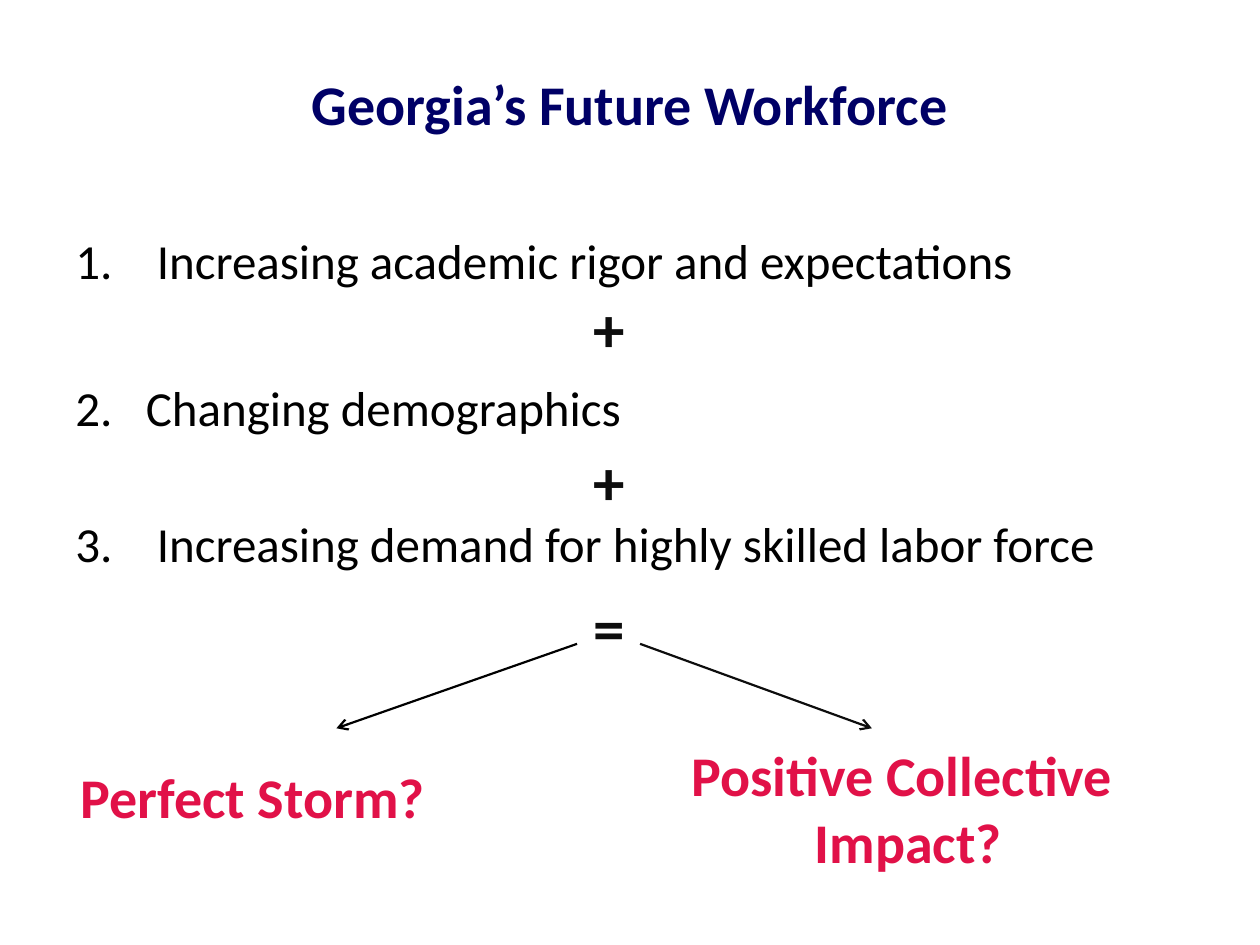
from dataclasses import dataclass

from lxml import etree
from pptx import Presentation
from pptx.dml.color import RGBColor
from pptx.enum.shapes import MSO_CONNECTOR
from pptx.enum.text import MSO_ANCHOR, PP_ALIGN
from pptx.oxml.ns import qn
from pptx.util import Inches, Pt

LEFT, CENTER = PP_ALIGN.LEFT, PP_ALIGN.CENTER
MIDDLE = MSO_ANCHOR.MIDDLE
STRAIGHT = MSO_CONNECTOR.STRAIGHT


@dataclass(frozen=True)
class Theme:
    """Colours and type sizes of the slide."""

    font: str = "Calibri"
    navy: str = "000066"
    black: str = "000000"
    ink: str = "0D0D0D"
    red: str = "E11148"
    item_size: int = 28
    heading_size: int = 32
    sign_size: int = 36
    line_width: float = 1.25


THEME = Theme()


def add_text(slide, box, text, size, color, bold=True, align=CENTER):
    """Add a wrapped text box, one paragraph per line of text."""
    sp = slide.shapes.add_textbox(*map(Inches, box))
    tf = sp.text_frame
    tf.word_wrap = True
    tf.text = text
    for p in tf.paragraphs:
        p.alignment = align
        for r in p.runs:
            r.font.name = THEME.font
            r.font.size = Pt(size)
            r.font.bold = bold
            r.font.color.rgb = RGBColor.from_string(color)
    return sp


def add_title(slide, text):
    """Add the centred slide title."""
    sp = add_text(slide, (0, 0.5, 10, 0.64), text, THEME.heading_size, THEME.navy)
    sp.text_frame.vertical_anchor = MIDDLE


def add_item(slide, top, text):
    """Add a numbered statement with a hanging indent."""
    sp = add_text(slide, (0.5, top, 9, 0.57), text, THEME.item_size,
                  THEME.black, bold=False, align=LEFT)
    pPr = sp.text_frame.paragraphs[0]._p.get_or_add_pPr()
    pPr.set("marL", str(Inches(0.56)))
    pPr.set("indent", str(Inches(-0.56)))


def add_sign(slide, top, text):
    """Add a plus or equals sign between statements."""
    add_text(slide, (4.5, top, 0.67, 0.71), text, THEME.sign_size, THEME.ink)


def add_arrow(slide, start, end, color):
    """Add a straight line with an open arrowhead at its end."""
    cx = slide.shapes.add_connector(STRAIGHT, *map(Inches, start + end))
    cx.line.color.rgb = RGBColor.from_string(color)
    cx.line.width = Pt(THEME.line_width)
    etree.SubElement(cx.line._get_or_add_ln(), qn("a:tailEnd"), type="arrow")
    etree.SubElement(cx._element.spPr, qn("a:effectLst"))


def add_outcome(slide, box, text, align):
    """Add one of the possible outcomes."""
    add_text(slide, box, text, THEME.heading_size, THEME.red, align=align)


def main():
    """Build and save the slide."""
    prs = Presentation()
    prs.slide_width, prs.slide_height = Inches(10), Inches(7.5)
    slide = prs.slides.add_slide(prs.slide_layouts[6])

    add_title(slide, "Georgia’s Future Workforce")
    for top, text in (
        (1.78, "1.\t Increasing academic rigor and expectations"),
        (2.95, "2.\tChanging demographics"),
        (4.03, "3.\t Increasing demand for highly skilled labor force"),
    ):
        add_item(slide, top, text)
    for top, text in ((2.25, "+"), (3.46, "+"), (4.62, "=")):
        add_sign(slide, top, text)
    add_arrow(slide, (4.58, 5.11), (2.67, 5.78), THEME.black)
    add_arrow(slide, (5.08, 5.11), (6.92, 5.78), THEME.ink)
    add_outcome(slide, (0.54, 6, 3.17, 0.64), "Perfect Storm?", LEFT)
    add_outcome(slide, (4.25, 5.83, 5.92, 1.18),
                "Positive Collective \nImpact?", CENTER)

    prs.save("out.pptx")


if __name__ == "__main__":
    main()
